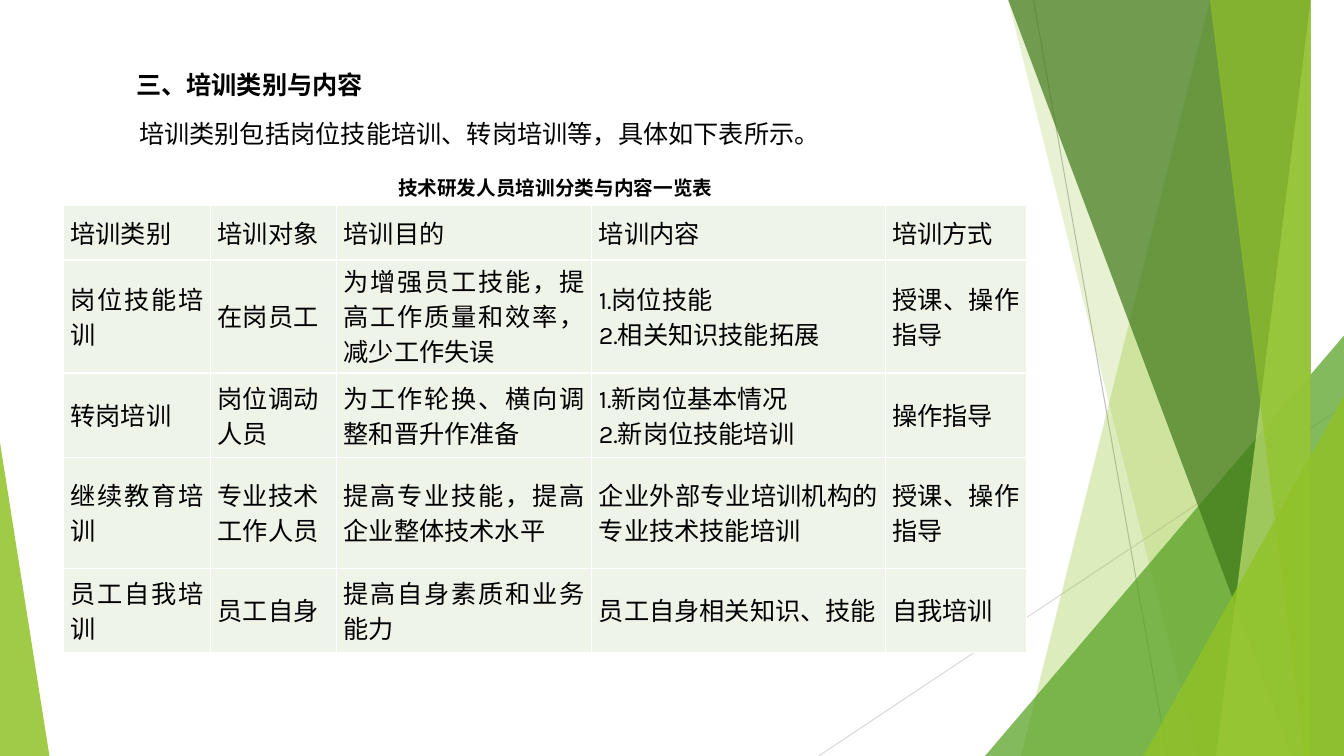
import lxml.etree
import pptx
import pptx.dml.color
import pptx.enum.shapes
import pptx.enum.text
import pptx.oxml.ns
import pptx.util

Inches = pptx.util.Inches
Pt = pptx.util.Pt
qn = pptx.oxml.ns.qn
ANCHOR = pptx.enum.text.MSO_ANCHOR
ALIGN = pptx.enum.text.PP_ALIGN
CHINESE_FONT = "Noto Sans CJK SC"
COLUMN_WIDTHS = [1.46, 1.25, 2.53, 2.91, 1.4]
ROW_HEIGHTS = [0.54, 1.12, 0.84, 1.1, 0.83]
TRAINING_ROWS = [
    ["培训类别", "培训对象", "培训目的", "培训内容", "培训方式"],
    ["岗位技能培训", "在岗员工", "为增强员工技能，提高工作质量和效率，减少工作失误",
     "1.岗位技能\n2.相关知识技能拓展", "授课、操作指导"],
    ["转岗培训", "岗位调动\n人员", "为工作轮换、横向调整和晋升作准备",
     "1.新岗位基本情况\n2.新岗位技能培训", "操作指导"],
    ["继续教育培训", "专业技术\n工作人员", "提高专业技能，提高企业整体技术水平",
     "企业外部专业培训机构的专业技术技能培训", "授课、操作指导"],
    ["员工自我培训", "员工自身", "提高自身素质和业务能力", "员工自身相关知识、技能", "自我培训"],
]


def paint(color_format, color):
    """Set a colour format from a hex string."""
    color_format.rgb = pptx.dml.color.RGBColor.from_string(color)


def fill_shape(shape, color, opacity):
    """Give a shape a translucent fill without outline or shadow."""
    shape.shadow.inherit = False
    shape.line.fill.background()
    shape.fill.solid()
    paint(shape.fill.fore_color, color)
    solid = shape.fill._xPr.find(qn("a:solidFill"))
    alpha = lxml.etree.SubElement(solid[0], qn("a:alpha"))
    alpha.set("val", str(opacity * 1000))


def add_ray(page, start, end, color):
    """Draw one thin line of the background."""
    points = [Inches(value) for value in start + end]
    ray = page.shapes.add_connector(pptx.enum.shapes.MSO_CONNECTOR.STRAIGHT, *points)
    ray.line.width = Pt(0.75)
    paint(ray.line.color, color)
    lxml.etree.SubElement(ray._element.spPr, qn("a:effectLst"))


def add_facet(page, box, top_left, top_right, bottom_left, color, opacity):
    """Draw a band that runs down the right edge of the box."""
    left, top, width, height = box
    right, bottom = left + width, top + height
    builder = page.shapes.build_freeform(left + top_left, top, scale=Inches(1))
    builder.add_line_segments(
        [(left + top_right, top), (right, bottom), (left + bottom_left, bottom)]
        if top_right > width else
        [(left + top_right, top), (right, top), (right, bottom), (left + bottom_left, bottom)])
    fill_shape(builder.convert_to_shape(), color, opacity)


def add_corner(page, box, width, height, peak, color, opacity):
    """Draw a right triangle in the lower corner under its peak side."""
    left = box[0] + peak * (box[2] - width)
    top = box[1] + box[3] - height
    corner = page.shapes.add_shape(
        pptx.enum.shapes.MSO_SHAPE.ISOSCELES_TRIANGLE,
        *[Inches(value) for value in (left, top, width, height)])
    corner.adjustments[0] = peak
    fill_shape(corner, color, opacity)


def add_background(page, box):
    """Draw the rays, facets and corners around the content."""
    left, top, width, height = box
    right, bottom = left + width, top + height
    add_ray(page, (left + 10.25, top), (left + 11.58, bottom), "BFBFBF")
    add_ray(page, (right, top + 4.03), (left + 8.12, bottom), "D9D9D9")
    add_facet(page, box, 12.28, width, 10.04, "90C226", 30)
    add_facet(page, box, 10.5, width, 11.83, "90C226", 20)
    add_corner(page, box, 3.56, 4.17, 1, "54A021", 72)
    add_facet(page, box, 10.21, width, 12.91, "3F7819", 70)
    add_facet(page, box, 13.03, width, 11.92, "C0E474", 70)
    add_facet(page, box, 11.96, width, 13.18, "90C226", 65)
    add_corner(page, box, 1.99, 3.57, 1, "90C226", 80)
    add_corner(page, box, 0.49, 3.11, 0, "90C226", 85)


def format_paragraph(para, size, font, bold=False, align=ALIGN.JUSTIFY, spacing=25):
    """Set the type and spacing of a paragraph."""
    para.alignment = align
    para.space_before = Pt(0)
    if spacing:
        para.line_spacing = Pt(spacing)
    para.font.size = Pt(size)
    para.font.bold = bold
    para.font.name = font
    paint(para.font.fill.fore_color if para.font.fill.type else para.font.color, "000000")
    east_asian = lxml.etree.SubElement(para.font._element, qn("a:ea"))
    east_asian.set("typeface", CHINESE_FONT)


def place_text(shape, box, text, size=18, indent=0, **style):
    """Put one line of text in a shape at the box."""
    shape.left, shape.top, shape.width, shape.height = [Inches(value) for value in box]
    frame = shape.text_frame
    frame.word_wrap = True
    frame.vertical_anchor = ANCHOR.TOP
    frame.auto_size = pptx.enum.text.MSO_AUTO_SIZE.SHAPE_TO_FIT_TEXT
    frame.text = text
    para = frame.paragraphs[0]
    format_paragraph(para, size, CHINESE_FONT, **style)
    properties = para._p.get_or_add_pPr()
    properties.set("marL", "0")
    properties.set("indent", str(Inches(indent)))
    properties.insert_element_before(
        lxml.etree.Element(qn("a:buNone")), "a:tabLst", "a:defRPr", "a:extLst")


def format_cell(cell, text):
    """Write one table cell with its fill and white borders."""
    cell.text = text
    cell.vertical_anchor = ANCHOR.MIDDLE
    cell.margin_left = cell.margin_right = Inches(0.07)
    cell.margin_top = cell.margin_bottom = 0
    for para in cell.text_frame.paragraphs:
        format_paragraph(para, 18, "Karla")
    cell.fill.solid()
    paint(cell.fill.fore_color, "EEF4E8")
    properties = cell._tc.get_or_add_tcPr()
    for position, side in enumerate(["lnL", "lnR", "lnT", "lnB"]):
        border = lxml.etree.Element(qn("a:" + side), w=str(Pt(1)))
        solid = lxml.etree.SubElement(border, qn("a:solidFill"))
        lxml.etree.SubElement(solid, qn("a:srgbClr"), val="FFFFFF")
        properties.insert(position, border)


def add_training_table(page, box):
    """Place the training table in the box."""
    table = page.shapes.add_table(
        len(ROW_HEIGHTS), len(COLUMN_WIDTHS), *[Inches(value) for value in box]).table
    table.first_row = table.horz_banding = False
    for column, width in zip(table.columns, COLUMN_WIDTHS):
        column.width = Inches(width)
    for row, height, texts in zip(table.rows, ROW_HEIGHTS, TRAINING_ROWS):
        row.height = Inches(height)
        for cell, text in zip(row.cells, texts):
            format_cell(cell, text)


def build_training_page(deck, box):
    """Build the page on training types and contents."""
    page = deck.slides.add_slide(deck.slide_layouts[1])
    left, top = box[:2]
    add_background(page, box)
    place_text(page.shapes.title, (left + 1.25, top + 0.59, 6.67, 0.41),
               "三、培训类别与内容", bold=True)
    place_text(page.placeholders[1], (left + 0.89, top + 1.08, 9.06, 0.41),
               "培训类别包括岗位技能培训、转岗培训等，具体如下表所示。", indent=0.39)
    add_training_table(page, (left + 0.63, top + 2.04, sum(COLUMN_WIDTHS), sum(ROW_HEIGHTS)))
    caption = page.shapes.add_textbox(0, 0, 0, 0)
    place_text(caption, (left + 2.29, top + 1.7, 6.23, 0.38), "技术研发人员培训分类与内容一览表",
               size=14, indent=1.56, bold=True, align=ALIGN.LEFT, spacing=None)


def main():
    """Create and save the deck."""
    deck = pptx.Presentation()
    deck.slide_width, deck.slide_height = Inches(13.33), Inches(7.5)
    build_training_page(deck, (0, 0, 13.33, 7.5))
    deck.save("out.pptx")


if __name__ == "__main__":
    main()
